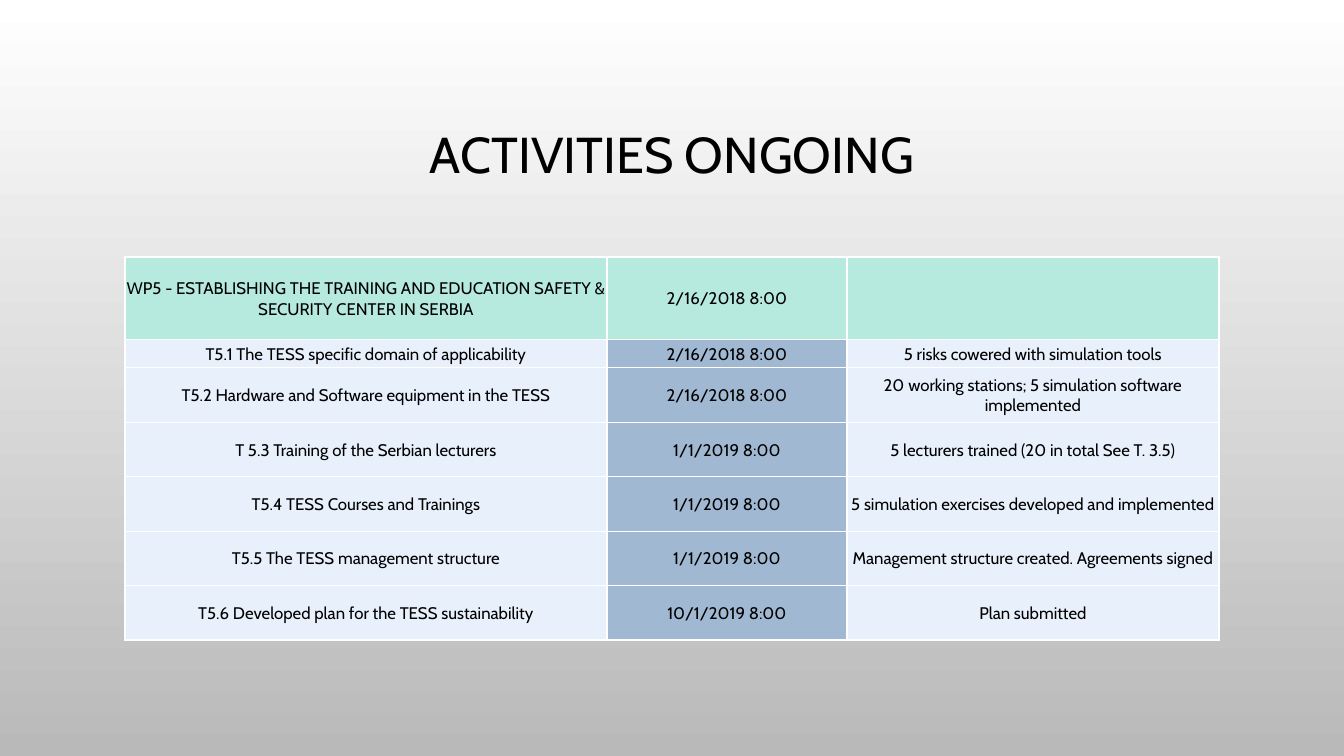
"""Builds the slide listing the ongoing activities of work package 5."""
from lxml import etree
from pptx import Presentation, util as u
from pptx.dml.color import RGBColor
from pptx.enum import text
from pptx.oxml import ns

TITLE = "ACTIVITIES ONGOING"
ACTIVITIES = [
    ("WP5 - ESTABLISHING THE TRAINING AND EDUCATION SAFETY & SECURITY CENTER IN SERBIA", "2/16/2018 8:00", ""),
    ("T5.1 The TESS specific domain of applicability", "2/16/2018 8:00", "5 risks cowered with simulation tools"),
    ("T5.2 Hardware and Software equipment in the TESS", "2/16/2018 8:00",
     "20 working stations; 5 simulation software implemented"),
    ("T 5.3 Training of the Serbian lecturers", "1/1/2019 8:00", "5 lecturers trained (20 in total See T. 3.5)"),
    ("T5.4 TESS Courses and Trainings", "1/1/2019 8:00", "5 simulation exercises developed and implemented"),
    ("T5.5 The TESS management structure", "1/1/2019 8:00", "Management structure created. Agreements signed"),
    ("T5.6 Developed plan for the TESS sustainability", "10/1/2019 8:00", "Plan submitted"),
]
COLUMN_WIDTHS = [4.78, 2.38, 3.69]
ROW_HEIGHTS = [0.82, 0.28] + [0.54] * 5
HEADER_FILL = "B7EADE"
COLUMN_FILLS = ["E8F0FC", "A1B8D3", "E8F0FC"]
BACKGROUND = ["FFFFFF", "B9B9B9"]
BORDER = "FFFFFF"
FONT, INK = "Cabin", "000000"


def color(value):
    return RGBColor.from_string(value)


def style(para, size):
    para.alignment = text.PP_ALIGN.CENTER
    para.font.name = FONT
    para.font.size = u.Pt(size)
    para.font.color.rgb = color(INK)


def add_borders(cell):
    properties = cell._tc.get_or_add_tcPr()
    for side in ("lnL", "lnR", "lnT", "lnB"):
        line = etree.SubElement(properties, ns.qn("a:" + side), w=str(u.Pt(1)))
        fill = etree.SubElement(line, ns.qn("a:solidFill"))
        etree.SubElement(fill, ns.qn("a:srgbClr"), val=BORDER)


def paint_background(page):
    fill = page.background.fill
    fill.gradient()
    fill.gradient_angle = 270
    for stop, position, value in zip(fill.gradient_stops, (0, 1), BACKGROUND):
        stop.position = position
        stop.color.rgb = color(value)


def add_title(page):
    box = page.shapes.add_textbox(u.Inches(1), u.Inches(0.68), u.Inches(11.33), u.Inches(1.75))
    frame = box.text_frame
    frame.word_wrap = True
    frame.vertical_anchor = text.MSO_ANCHOR.MIDDLE
    para = frame.paragraphs[0]
    para.text = TITLE
    para.line_spacing = 0.9
    style(para, 36)


def add_activities(page):
    table = page.shapes.add_table(
        len(ACTIVITIES), len(COLUMN_WIDTHS), u.Inches(1.24), u.Inches(2.55),
        u.Inches(sum(COLUMN_WIDTHS)), u.Inches(sum(ROW_HEIGHTS))).table
    for column, width in zip(table.columns, COLUMN_WIDTHS):
        column.width = u.Inches(width)
    for row, height in zip(table.rows, ROW_HEIGHTS):
        row.height = u.Inches(height)
    for r, activity in enumerate(ACTIVITIES):
        for c, words in enumerate(activity):
            cell = table.cell(r, c)
            cell.margin_left = cell.margin_right = cell.margin_top = u.Inches(0.01)
            cell.margin_bottom = 0
            cell.vertical_anchor = text.MSO_ANCHOR.MIDDLE
            add_borders(cell)
            cell.fill.solid()
            cell.fill.fore_color.rgb = color(COLUMN_FILLS[c] if r else HEADER_FILL)
            para = cell.text_frame.paragraphs[0]
            para.text = words
            style(para, 12)


def main():
    deck = Presentation()
    deck.slide_width, deck.slide_height = u.Inches(13.33), u.Inches(7.5)
    page = deck.slides.add_slide(deck.slide_layouts[6])
    paint_background(page)
    add_title(page)
    add_activities(page)
    deck.save("out.pptx")


if __name__ == "__main__":
    main()
